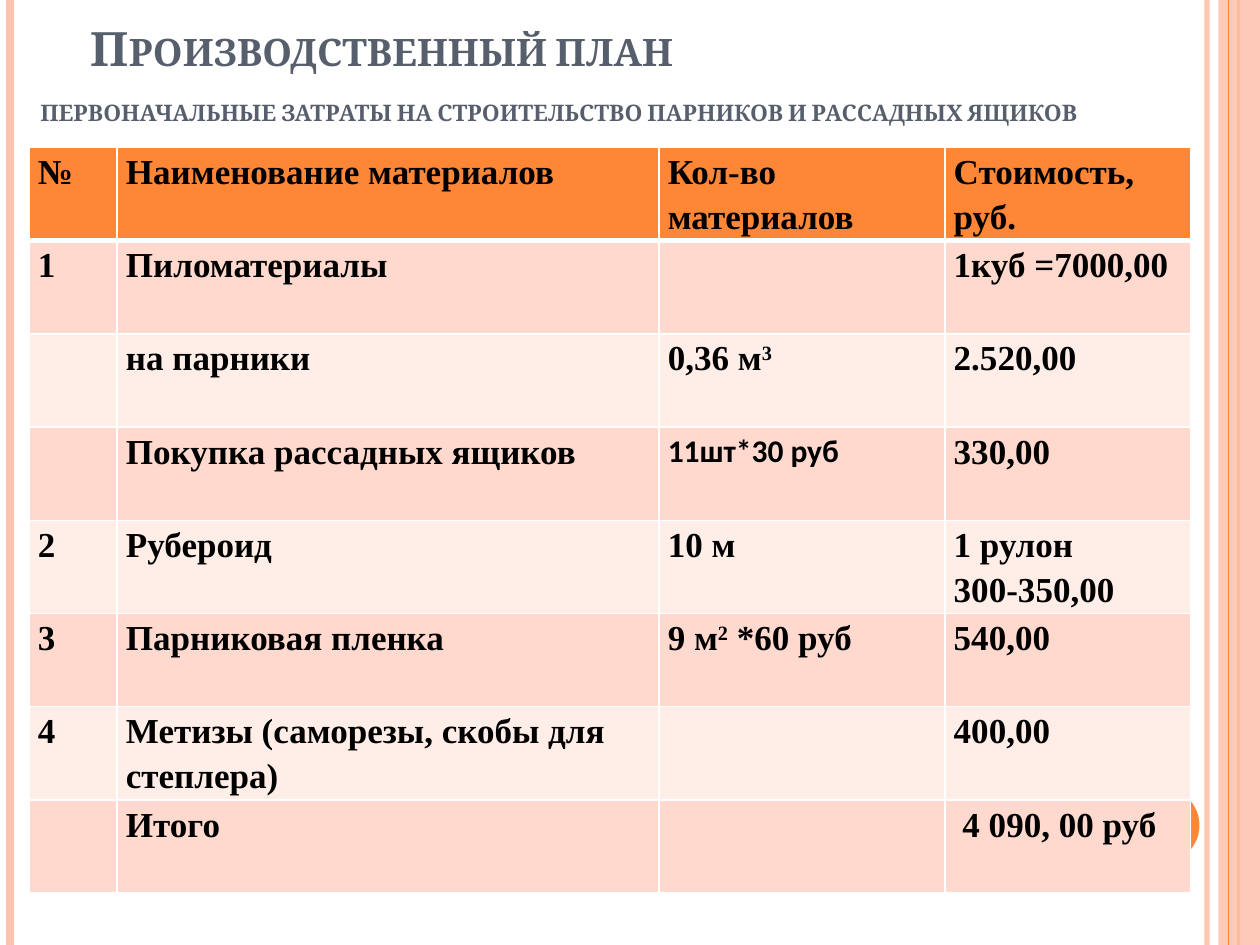
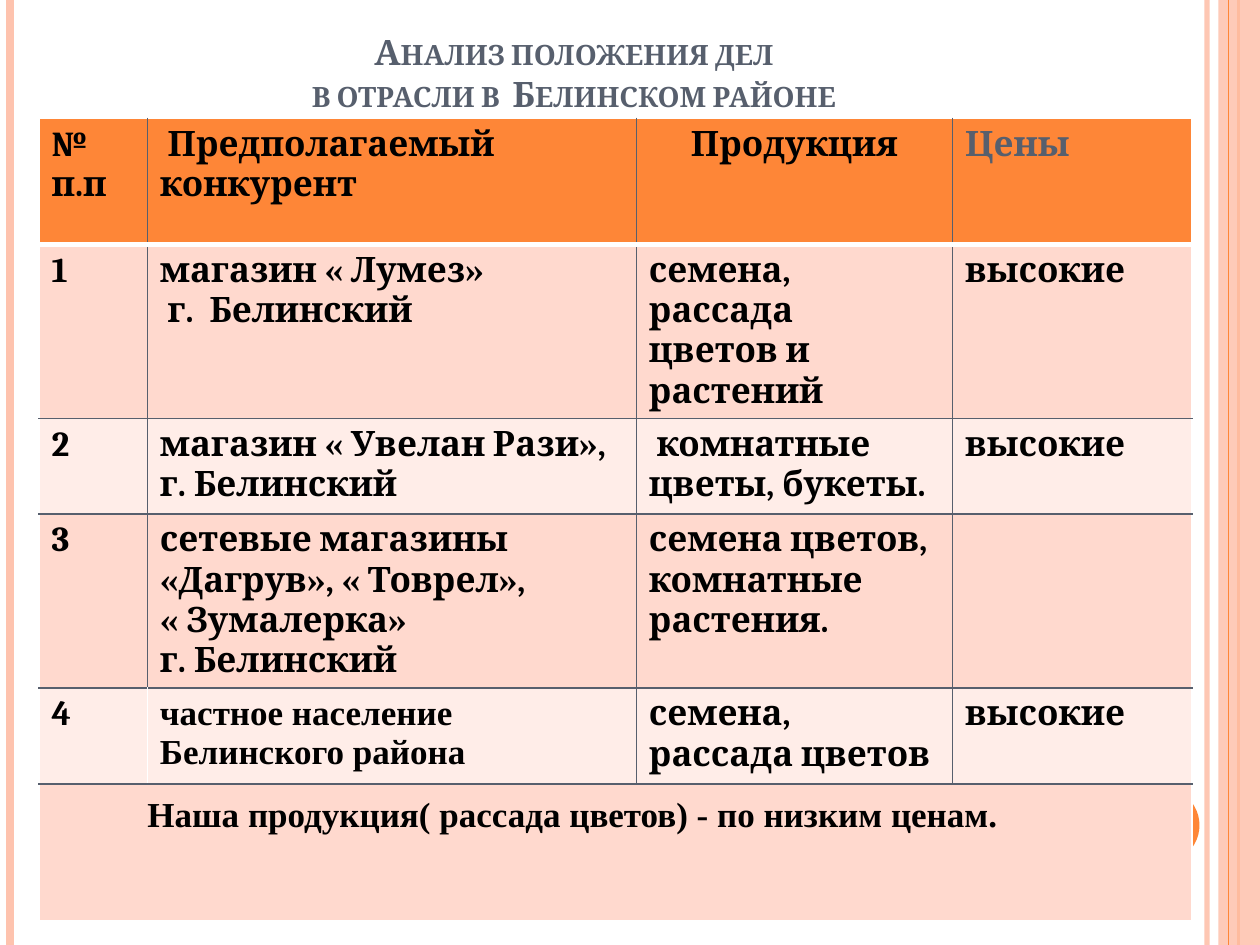
"""Build two slides: greenhouse start-up costs and a review of local rivals."""
from lxml import etree
from pptx import Presentation
from pptx import util as u
from pptx.dml.color import RGBColor
from pptx.enum import shapes, text
from pptx.oxml.ns import qn

ORANGE = RGBColor(0xFE, 0x86, 0x37)
PEACH = RGBColor(0xFE, 0xC3, 0xAE)
ROSE = RGBColor(0xFF, 0xD9, 0xCE)
BLUSH = RGBColor(0xFF, 0xED, 0xE8)
SLATE = RGBColor(0x57, 0x5F, 0x6D)
BLACK = RGBColor(0, 0, 0)
WHITE = RGBColor(0xFF, 0xFF, 0xFF)
SERIF, ROMAN, SANS = "Cambria", "Times New Roman", "Calibri"


def say(para, words, size, face, color):
    """Add one bold run and return it."""
    run = para.add_run()
    run.text = words
    run.font.size = u.Pt(size)
    run.font.name = face
    run.font.bold = True
    run.font.color.rgb = color
    return run


def edge(cell, sides):
    """Put (colour, points) borders on a cell: left, right, top, bottom."""
    props = cell._tc.get_or_add_tcPr()
    for spot, (side, (color, width)) in enumerate(zip("LRTB", sides)):
        line = etree.Element(qn(f"a:ln{side}"), w=str(u.Pt(width)))
        fill = etree.SubElement(line, qn("a:solidFill"))
        etree.SubElement(fill, qn("a:srgbClr"), val=str(color))
        props.insert(spot, line)


prs = Presentation()
prs.slide_width, prs.slide_height = u.Inches(10), u.Inches(7.5)
layout = prs.slide_layouts[5]
costs, rivals = prs.slides.add_slide(layout), prs.slides.add_slide(layout)

decor = []
stripes = [(9.58, PEACH, 3), (0.08, PEACH, 4.5), (9.83, ORANGE, 1.5), (9.75, ORANGE, 0.75)]
for x, color, width in stripes:
    rule = costs.shapes.add_connector(
        shapes.MSO_CONNECTOR.STRAIGHT, u.Inches(x), 0, u.Inches(x), prs.slide_height)
    rule.line.color.rgb = color
    rule.line.width = u.Pt(width)
    etree.SubElement(rule.element.spPr, qn("a:effectLst"))
    decor.append(rule)

forms = [
    (shapes.MSO_SHAPE.RECTANGLE, (9.67, 0, 0.33, 7.5), PEACH),
    (shapes.MSO_SHAPE.OVAL, (8.92, 6.25, 0.6, 0.6), ORANGE),
]
for form, box, color in forms:
    shape = costs.shapes.add_shape(form, *map(u.Inches, box))
    shape.fill.solid()
    shape.fill.fore_color.rgb = color
    shape.line.fill.background()
    shape.shadow.inherit = False
    decor.append(shape)

edge_rule, left_rule, wide_rule, thin_rule, band, disc = decor
for part, alpha in [(edge_rule, 93), (band, 87)]:
    tint = next(part.element.spPr.iter(qn("a:srgbClr")))
    etree.SubElement(tint, qn("a:alpha"), val=str(alpha * 1000))

tree = layout.element.cSld.spTree
for num, part in enumerate([edge_rule, left_rule, wide_rule, band, thin_rule, disc], 101):
    next(part.element.iter(qn("p:cNvPr"))).set("id", str(num))
    tree.append(part.element)

LEFT, MID = text.PP_ALIGN.LEFT, text.PP_ALIGN.CENTER
heads = [
    (costs, (0.16, 0, 9.61, 1.09), 0.08, LEFT, [
        ("Производственный план", 27, 0.46, 0),
        ("первоначальные затраты на строительство парников и рассадных ящиков", 16.2, 0.06, 10),
    ]),
    (rivals, (0.47, 0, 8.17, 1.25), 0.34, MID, [
        ("Анализ положения дел", 20, 0, 0),
        ("в отрасли в  Белинском районе", 20, 0, 0),
    ]),
]
for slide, box, foot, align, lines in heads:
    title = slide.shapes.title
    title.left, title.top, title.width, title.height = map(u.Inches, box)
    frame = title.text_frame
    frame.auto_size = text.MSO_AUTO_SIZE.NONE
    frame.vertical_anchor = text.MSO_ANCHOR.BOTTOM
    frame.margin_bottom = u.Inches(foot)
    for num, (words, size, indent, gap) in enumerate(lines):
        para = frame.add_paragraph() if num else frame.paragraphs[0]
        para.alignment = align
        para.space_before = u.Pt(gap)
        para._p.get_or_add_pPr().set("marL", str(u.Inches(indent)))
        run = say(para, words, size, SERIF, SLATE)
        run.font._element.set("cap", "small")

cost_rows = [
    ("№", "Наименование материалов", "Кол-во материалов", "Стоимость, руб."),
    ("1", "Пиломатериалы", "", "1куб =7000,00"),
    ("", "на парники", "0,36 м^3", "2.520,00"),
    ("", "Покупка рассадных ящиков", "11шт*30 руб", "330,00"),
    ("2", "Рубероид", "10 м", "1 рулон\n300-350,00"),
    ("3", "Парниковая пленка", "9 м^2^ *60 руб", "540,00"),
    ("4", "Метизы (саморезы, скобы для степлера)", "", "400,00"),
    ("", "Итого", "", " 4 090, 00 руб"),
]
rival_rows = [
    ("№\nп.п", " Предполагаемый конкурент", "Продукция", "Цены"),
    ("1", "магазин « Лумез»\n г.  Белинский", "семена, рассада\nцветов и растений", "высокие"),
    ("2", "магазин « Увелан Рази», г. Белинский", " комнатные цветы, букеты.", "высокие"),
    ("3", "сетевые магазины «Дагрув», « Товрел»,\n« Зумалерка»\nг. Белинский",
     "семена цветов,\nкомнатные растения.", ""),
    ("4", "частное население Белинского района", "семена, рассада цветов", "высокие"),
    ("Наша продукция( рассада цветов) - по низким ценам.", "", "", ""),
]
plans = [
    (costs, cost_rows, (0.23, 1.17), (0.7, 4.3, 2.27, 1.95), [0.74] * 8,
     (0.07, 0), ROMAN, WHITE, 1.15, {(3, 2): (18, SANS, BLACK)}),
    (rivals, rival_rows, (0.31, 0.94), (0.86, 3.88, 2.51, 1.9),
     [1, 1.38, 0.76, 1.38, 0.76, 1.09], (0.1, 0.05), SERIF, SLATE, 1,
     {(0, 3): (20, SERIF, SLATE), (4, 1): (20, ROMAN, BLACK), (5, 0): (20, ROMAN, BLACK)}),
]
grids = []
for slide, rows, spot, wide, tall, pad, face, ink, space, odd in plans:
    size = map(u.Inches, (*spot, sum(wide), sum(tall)))
    grid = slide.shapes.add_table(len(rows), len(wide), *size).table
    grids.append(grid)
    for col, width in zip(grid.columns, wide):
        col.width = u.Inches(width)
    for row, height in zip(grid.rows, tall):
        row.height = u.Inches(height)
    for r, row in enumerate(rows):
        for c, words in enumerate(row):
            cell = grid.cell(r, c)
            cell.margin_left = cell.margin_right = u.Inches(pad[0])
            cell.margin_top = cell.margin_bottom = u.Inches(pad[1])
            cell.fill.solid()
            cell.fill.fore_color.rgb = ORANGE if r == 0 else (BLUSH, ROSE)[r % 2]
            last = r == len(rows) - 1
            edge(cell, [
                (WHITE if c == 0 or last or (r, c) == (4, 1) else ink, 1),
                (WHITE if c == 3 or last or (r, c) == (4, 0) else ink, 1),
                (WHITE if r < 2 else ink, 3 if r == 1 else 1),
                (WHITE if r == 0 or last else ink, 3 if r == 0 else 1),
            ])
            if not words:
                continue
            frame = cell.text_frame
            for num, line in enumerate(words.split("\n")):
                para = frame.add_paragraph() if num else frame.paragraphs[0]
                para.line_spacing = float(space)
                for turn, bit in enumerate(line.split("^")):
                    run = say(para, bit, *odd.get((r, c), (20, face, BLACK)))
                    if turn % 2:
                        run.font._element.set("baseline", "30000")

grid = grids[1]
grid.cell(0, 2).text_frame.paragraphs[0].alignment = MID
grid.cell(5, 0).merge(grid.cell(5, 3))
note = grid.cell(5, 0).text_frame.paragraphs[0]
note.line_spacing = 1.15
note._p.get_or_add_pPr().set("marL", str(u.Inches(0.76)))

prs.save("out.pptx")
